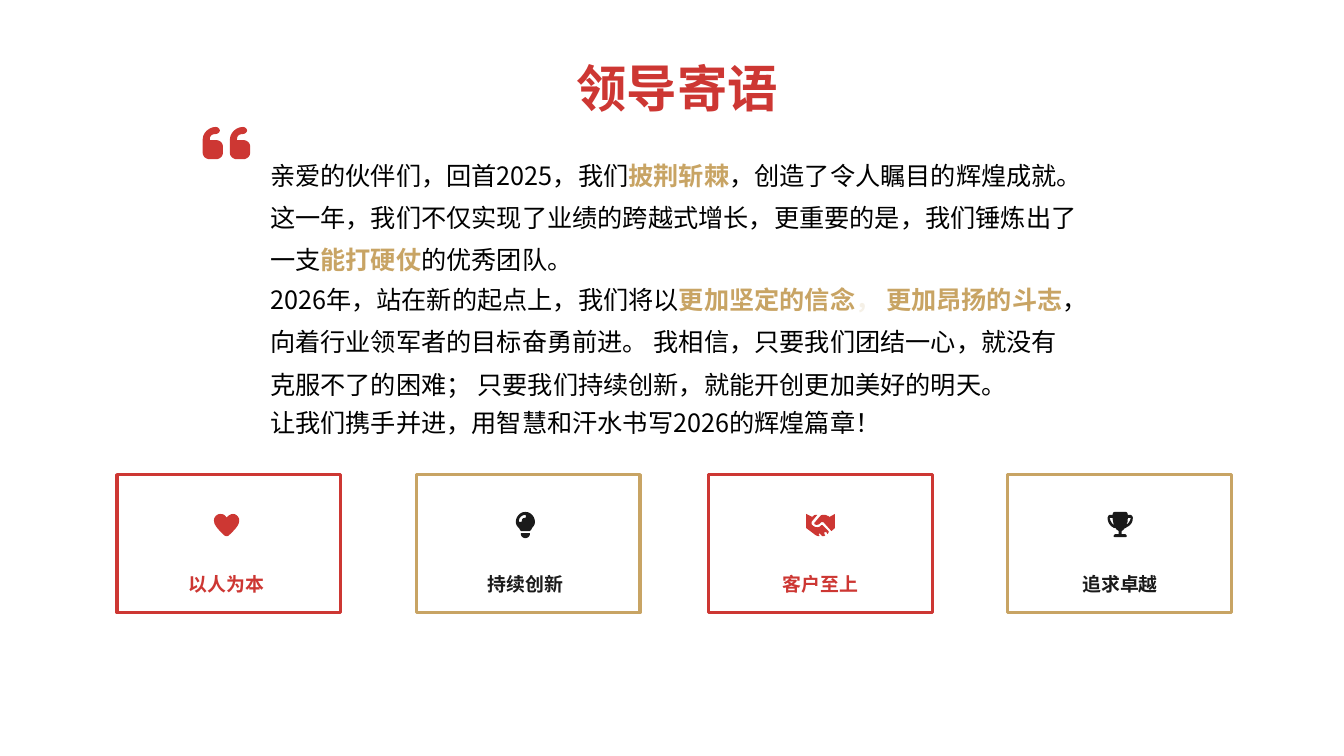
from dataclasses import dataclass

from lxml.etree import SubElement
from pptx import Presentation
from pptx.dml.color import RGBColor
from pptx.enum.shapes import MSO_SHAPE
from pptx.enum.text import MSO_ANCHOR, PP_ALIGN
from pptx.oxml.ns import qn
from pptx.util import Cm, Pt


@dataclass(frozen=True)
class Theme:
    red: str = "CD3733"
    gold: str = "C8A464"
    cream: str = "F5F0E6"
    dark: str = "1A1A1A"
    black: str = "000000"
    main_font: str = "Noto Sans CJK SC"
    label_font: str = "Cabin"
    title_size: float = 36
    body_size: float = 18
    label_size: float = 13.5
    border: float = 2.25


THEME = Theme()
ICON_UNIT = Cm(0.0254)
CURVE_STEPS = 6

QUOTE_MARK = (
    "M 0 21 C 0 15 6 9 13 9 C 15 9 17 11 17 12.5 C 17 14 15 16 13 16 "
    "C 9 16 7 18 7 21 L 7 22 L 13 22 C 17 22 20 25 20 28 L 20 35 "
    "C 20 38 17 41 13 41 L 7 41 C 3 41 0 38 0 35"
)
HEART = (
    "M 12 5 L 12.5 5.5 L 13 5 C 15 3 17 2 19 2 C 22 2 25 5 25 8 L 25 9 "
    "C 25 14 18 20 15 23 C 14 24 13 24 12.5 24 C 12 24 11 24 10 23 "
    "C 7 20 0 14 0 9 L 0 8 C 0 5 3 2 6 2 C 9 2 11 3 12 5"
)
BULB = (
    "M 14 19 C 15 18 16 17 16 16 C 18 14 19 12 19 10 C 19 5 15 0 9.5 0 "
    "C 4 0 0 5 0 10 C 0 12 1 14 3 16 C 4 17 4 18 5 19 "
    "M 14 21 L 5 21 L 5 22 C 5 24 7 26 9 26 L 10 26 C 12 26 14 24 14 22 "
    "M 9 6 C 7 6 6 7 6 9 C 6 10 5 10 4.5 10 C 4 10 3 10 3 9 "
    "C 3 6 6 3 9 3 C 10 3 10 4 10 4.5 C 10 5 10 6 9 6"
)
HANDSHAKE = (
    "M 14 4 L 8 11 C 8 11 8 11 8 12 C 9 13 12 13 13 12 L 15 10 "
    "C 15 10 15 10 16 10 C 16 10 16 10 17 10 L 25 19 L 28.5 16 L 28.5 2 "
    "L 23 5 L 22 4 C 21 4 20 3 19 3 L 16 3 C 15 3 14 4 14 4 "
    "M 6 9 L 11 3 L 9 3 C 8 3 7 4 6 5 L 0 2 L 0 16 L 8 22 "
    "C 9 23 11 24 12 24 L 13 24 L 13 23 C 12 23 12 22 13 22 "
    "C 13 21 14 21 14 22 L 16 24 L 17 24 C 18 24 18 24 19 23 L 18 22 "
    "C 18 21 18 21 18 20 C 18 20 19 20 20 20 L 21 22 L 22 21 "
    "C 22 20 23 20 22 19 L 16 13 L 15 13 C 13 16 9 16 6 13 C 5 12 5 10 6 9"
)
TROPHY = (
    "M 7 0 L 18 0 C 19 0 20 1 20 3 L 23 3 C 24 3 25 5 25 6 "
    "C 25 11 22 14 19 15 C 18 16 18 16 17 16 C 16 18 15 18 14 19 L 14 22 "
    "L 17 22 C 18 22 19 23 19 24 C 19 25 18 25 17 25 L 8 25 "
    "C 7 25 6 25 6 24 C 6 23 7 22 8 22 L 11 22 L 11 19 "
    "C 10 18 9 18 8 16 C 7 16 6 16 5 15 C 3 14 0 11 0 6 "
    "C 0 5 1 3 2 3 L 5 3 C 5 1 6 0 7 0 "
    "M 5 6 L 2 6 C 3 10 5 12 6 13 C 6 11 5 9 5 6 "
    "M 18 13 C 20 12 22 10 23 6 L 20 6 C 20 9 20 11 18 13"
)

MESSAGE_BLOCKS = [
    (3.78, 3.1, [
        [("亲爱的伙伴们，回首2025，我们", "black"), ("披荆斩棘", "gold"),
         ("，创造了令人瞩目的辉煌成就。", "black")],
        [("这一年，我们不仅实现了业绩的跨越式增长，更重要的是，我们锤炼出了", "black")],
        [("一支", "black"), ("能打硬仗", "gold"), ("的优秀团队。", "black")],
    ]),
    (6.96, 3.0, [
        [("2026年，站在新的起点上，我们将以", "black"), ("更加坚定的信念", "gold"),
         ("， ", "cream"), ("更加昂扬的斗志", "gold"), ("，", "black")],
        [("向着行业领军者的目标奋勇前进。 我相信，只要我们团结一心，就没有", "black")],
        [("克服不了的困难； 只要我们持续创新，就能开创更加美好的明天。", "black")],
    ]),
    (9.98, 1.04, [
        [("让我们携手并进，用智慧和汗水书写2026的辉煌篇章！", "black")],
    ]),
]

VALUE_CARDS = [
    (2.95, 5.71, "以人为本", HEART, 25, THEME.red, THEME.red),
    (10.49, 13.24, "持续创新", BULB, 19, THEME.gold, THEME.dark),
    (17.86, 20.68, "客户至上", HANDSHAKE, 28.5, THEME.red, THEME.red),
    (25.4, 28.23, "追求卓越", TROPHY, 25, THEME.gold, THEME.dark),
]


def trace_contours(outline):
    tokens = iter(outline.split())
    contours = []
    for command in tokens:
        count = 3 if command == "C" else 1
        points = [(float(next(tokens)), float(next(tokens))) for _ in range(count)]
        if command == "M":
            contours.append(points)
        elif command == "L":
            contours[-1] += points
        else:
            corners = [contours[-1][-1], *points]
            for step in range(1, CURVE_STEPS + 1):
                t = step / CURVE_STEPS
                weights = ((1 - t) ** 3, 3 * t * (1 - t) ** 2, 3 * t * t * (1 - t), t ** 3)
                contours[-1].append(tuple(
                    sum(weight * corner[axis] for weight, corner in zip(weights, corners))
                    for axis in (0, 1)
                ))
    return contours


def add_icon(slide, left, top, contours, color):
    scaled = [[(x * ICON_UNIT, y * ICON_UNIT) for x, y in contour] for contour in contours]
    builder = slide.shapes.build_freeform(*scaled[0][0])
    for index, contour in enumerate(scaled):
        if index:
            builder.move_to(*contour[0])
        builder.add_line_segments(contour[1:], close=True)
    shape = builder.convert_to_shape(left, top)
    shape.shadow.inherit = False
    shape.fill.solid()
    shape.fill.fore_color.rgb = RGBColor.from_string(color)
    shape.line.fill.background()


def add_text(slide, box, lines, size, spacing, font=THEME.main_font, alignment=PP_ALIGN.LEFT):
    text_frame = slide.shapes.add_textbox(*box).text_frame
    text_frame.word_wrap = True
    text_frame.vertical_anchor = MSO_ANCHOR.MIDDLE
    text_frame.margin_left = text_frame.margin_right = 0
    text_frame.margin_top = text_frame.margin_bottom = 0
    for index, line in enumerate(lines):
        paragraph = text_frame.add_paragraph() if index else text_frame.paragraphs[0]
        paragraph.line_spacing = spacing
        paragraph.alignment = alignment
        for text, color, bold in line:
            run = paragraph.add_run()
            run.text = text
            run.font.size = Pt(size)
            run.font.bold = bold
            run.font.name = font
            run.font.color.rgb = RGBColor.from_string(color)
            east_asian = SubElement(run.font._element, qn("a:ea"))
            east_asian.set("typeface", THEME.main_font)


def add_title(slide, left, top, width, height):
    add_text(slide, (left, top, width, height), [[("领导寄语", THEME.red, True)]],
             THEME.title_size, 0.8)


def add_quote(slide, left, top):
    mark = trace_contours(QUOTE_MARK)[0]
    second_mark = [(x + 27, y) for x, y in mark]
    add_icon(slide, left, top, [mark, second_mark], THEME.red)


def add_message(slide, left, width):
    for top, height, lines in MESSAGE_BLOCKS:
        styled = [
            [(text, getattr(THEME, role), role != "black") for text, role in line]
            for line in lines
        ]
        add_text(slide, (left, Cm(top), width, Cm(height)), styled, THEME.body_size, 1.4)


def add_value_card(slide, left, top, width, height, center, label, outline, icon_width,
                   border_color, content_color):
    card = slide.shapes.add_shape(MSO_SHAPE.RECTANGLE, left, top, width, height)
    card.shadow.inherit = False
    card.fill.background()
    card.line.color.rgb = RGBColor.from_string(border_color)
    card.line.width = Pt(THEME.border)
    icon_left = center - int(icon_width * ICON_UNIT / 2)
    add_icon(slide, icon_left, top + Cm(0.94), trace_contours(outline), content_color)
    label_width = Cm(7)
    label_box = (center - label_width // 2, top + Cm(2.31), label_width, Cm(0.74))
    add_text(slide, label_box, [[(label, content_color, True)]], THEME.label_size, 1.3,
             THEME.label_font, PP_ALIGN.CENTER)


def main():
    presentation = Presentation()
    presentation.slide_width = Cm(33.87)
    presentation.slide_height = Cm(19.05)
    slide = presentation.slides.add_slide(presentation.slide_layouts[6])
    add_title(slide, Cm(14.53), Cm(1.7), Cm(5.31), Cm(1.27))
    add_quote(slide, Cm(5.11), Cm(2.97))
    add_message(slide, Cm(6.81), Cm(20.78))
    for left, center, *content in VALUE_CARDS:
        add_value_card(slide, Cm(left), Cm(11.96), Cm(5.64), Cm(3.48), Cm(center), *content)
    presentation.save("out.pptx")


if __name__ == "__main__":
    main()
